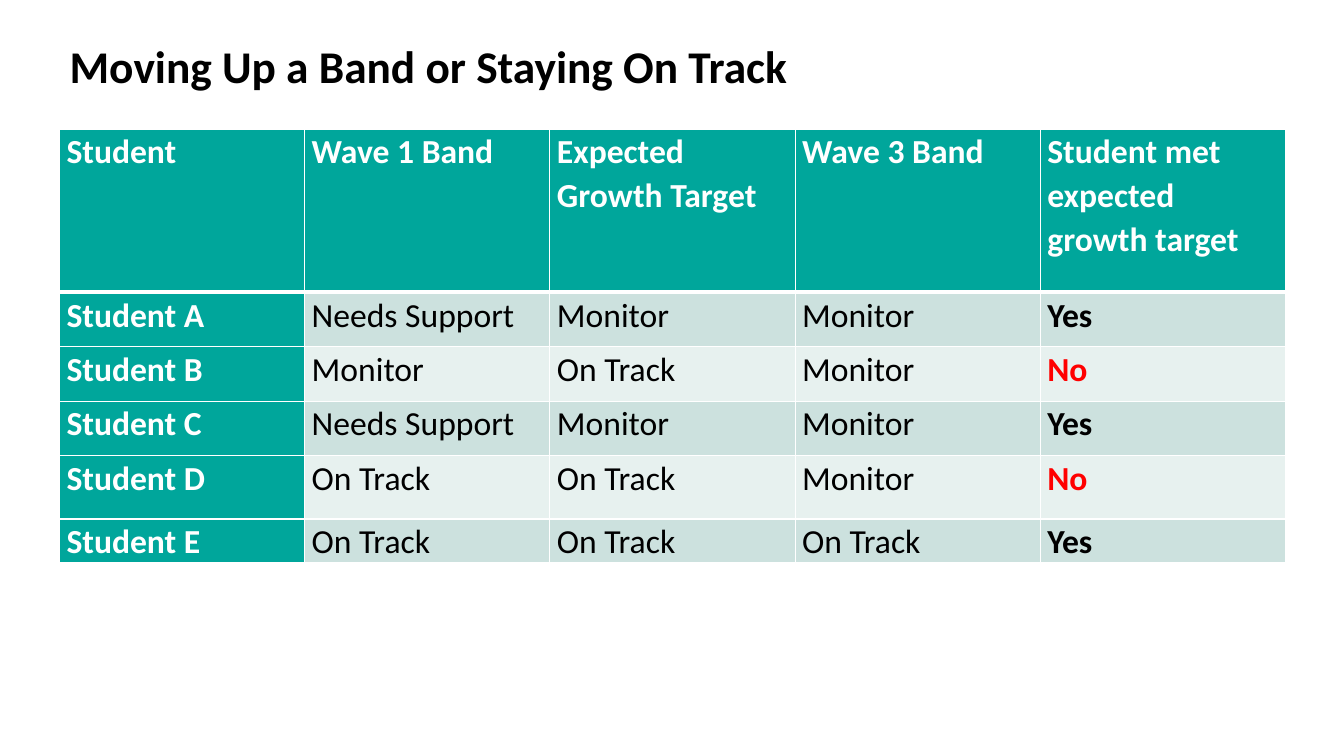
"""Build the slide with the table of student growth between bands."""
from lxml import etree
from pptx import Presentation
from pptx.dml.color import RGBColor
from pptx.enum import text
from pptx.oxml import ns
from pptx.util import Inches, Pt

TEAL, WHITE, BLACK, RED = "00A69B", "FFFFFF", "000000", "FF0000"
BANDS = ["CCE1DE", "E7F1EF"]
ROWS = [
    ["Student", "Wave 1 Band", "Expected Growth Target", "Wave 3 Band",
     "Student met expected growth target"],
    ["Student A", "Needs Support", "Monitor", "Monitor", "Yes"],
    ["Student B", "Monitor", "On Track", "Monitor", "No"],
    ["Student C", "Needs Support", "Monitor", "Monitor", "Yes"],
    ["Student D", "On Track", "On Track", "Monitor", "No"],
    ["Student E", "On Track", "On Track", "On Track", "Yes"],
]
ROW_HEIGHTS = [1.62, 0.54, 0.54, 0.54, 0.63, 0.43]


def format_font(paragraph, size, color, bold):
    paragraph.font.name = "Calibri"
    paragraph.font.size = Pt(size)
    paragraph.font.bold = bold
    paragraph.font.color.rgb = RGBColor.from_string(color)


def add_border(cell, side, width):
    properties = cell._tc.get_or_add_tcPr()
    line = etree.SubElement(properties, ns.qn(f"a:ln{side}"), w=str(Pt(width)))
    fill = etree.SubElement(line, ns.qn("a:solidFill"))
    etree.SubElement(fill, ns.qn("a:srgbClr"), val=WHITE)


presentation = Presentation()
presentation.slide_width = Inches(13.33)
presentation.slide_height = Inches(7.5)
slide = presentation.slides.add_slide(presentation.slide_layouts[5])

title = slide.shapes.title
title.left, title.top = Inches(0.59), Inches(0.3)
title.width, title.height = Inches(11.5), Inches(0.69)
title.text_frame.text = "Moving Up a Band or Staying On Track"
title.text_frame.auto_size = text.MSO_AUTO_SIZE.NONE
title.text_frame.vertical_anchor = text.MSO_ANCHOR.MIDDLE
heading = title.text_frame.paragraphs[0]
heading.alignment = text.PP_ALIGN.LEFT
format_font(heading, 32.4, BLACK, True)

table = slide.shapes.add_table(
    len(ROWS), len(ROWS[0]), Inches(0.59), Inches(1.28), Inches(12.16), Inches(4.3)
).table
table.first_col = True

for row_index, (height, values) in enumerate(zip(ROW_HEIGHTS, ROWS)):
    table.rows[row_index].height = Inches(height)
    for column_index, value in enumerate(values):
        cell = table.cell(row_index, column_index)
        is_header = row_index == 0 or column_index == 0
        for side in "LRTB":
            under_header = (row_index, side) in [(0, "B"), (1, "T")]
            add_border(cell, side, 3 if under_header else 1)
        cell.fill.solid()
        cell.fill.fore_color.rgb = RGBColor.from_string(
            TEAL if is_header else BANDS[(row_index - 1) % 2])
        cell.margin_left = cell.margin_right = Inches(0.07)
        cell.margin_top = cell.margin_bottom = 0
        cell.text = value
        paragraph = cell.text_frame.paragraphs[0]
        paragraph.line_spacing = 1.07
        paragraph.space_after = Pt(8)
        color = WHITE if is_header else RED if value == "No" else BLACK
        format_font(paragraph, 24, color, is_header or column_index == 4)

presentation.save("out.pptx")
